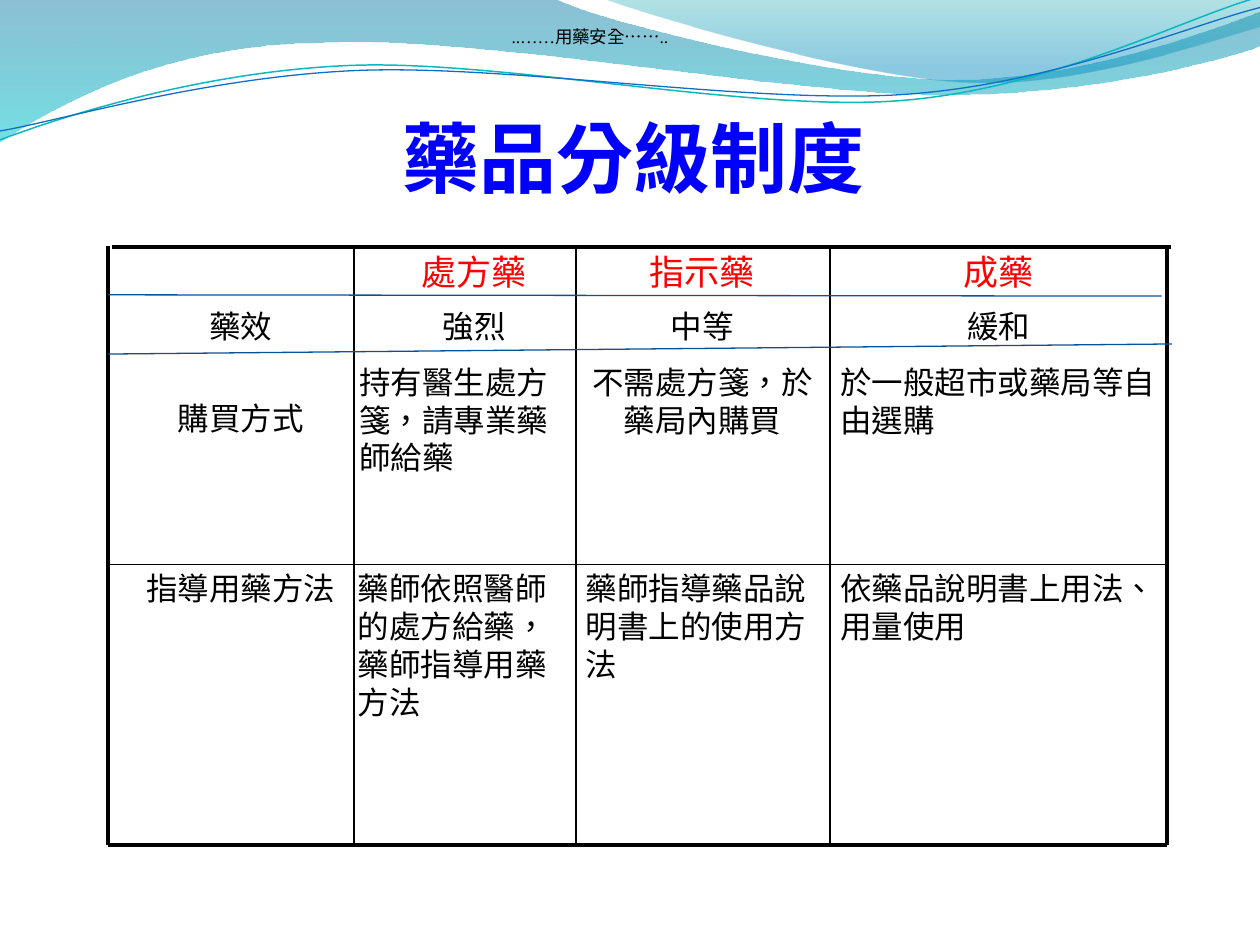
from math import cos, radians, sin

from lxml.etree import SubElement
from pptx import Presentation
from pptx.dml.color import RGBColor
from pptx.enum.shapes import MSO_CONNECTOR
from pptx.enum.text import MSO_ANCHOR, PP_ALIGN
from pptx.oxml.ns import qn
from pptx.util import Inches, Pt

COLORS = {
    "text": "000000", "title": "0000FF", "heading": "FF0000",
    "rule": "095295", "teal": "0AB8BF", "blue": "0F6FC6",
    "deep": "0074A1", "cyan": "00C6CF", "green": "00A1A9", "sky": "008BBF",
}
BODY_FONT = "Arial"
CHINESE_FONT = "Noto Sans CJK TC"
CENTER, LEFT = PP_ALIGN.CENTER, PP_ALIGN.LEFT

# Wave outlines: a start, then points (lines) or six numbers (Bezier curves)
LEFT_WAVE = [
    (0, -0.01), (4.4, -0.01),
    (4.76, 0.17, 6.64, 0.63, 7.58, 0.63), (8.53, 0.63, 9.58, 0.26, 10, 0.09),
    (10.01, 0.36),
    (9.83, 0.44, 8.7, 0.76, 7.46, 0.75), (6.22, 0.75, 3.82, 0.28, 2.57, 0.34),
    (1.29, 0.35, 0.46, 0.83, -0.01, 1.13), (0, -0.01),
]
RIGHT_WAVE = [
    (4.79, -0.01),
    (5.09, 0.11, 6.82, 0.62, 7.69, 0.65), (8.56, 0.69, 9.61, 0.32, 10, 0.21),
    (10, 0), (4.79, -0.01),
]
TEAL_CURVE = [
    (0, 1.11),
    (0.48, 0.93, 1.58, 0.57, 2.77, 0.52), (3.95, 0.47, 5.93, 0.89, 7.13, 0.8),
    (8.33, 0.71, 9.38, 0.15, 9.98, -0.02),
]
BLUE_CURVE = [
    (0, 1.04),
    (0.47, 0.96, 1.64, 0.61, 2.83, 0.56), (4.03, 0.51, 5.97, 0.83, 7.17, 0.75),
    (8.36, 0.67, 9.41, 0.21, 10, 0.06),
]
TILT = 2.7

COLUMN_EDGES = [0.86, 2.81, 4.57, 6.59, 9.26]
ROW_EDGES = [1.95, 2.4, 2.84, 4.48, 6.71]
COLUMN_LINES = [2.25, 1, 1, 1, 2.25]
ROW_LINES = {1.96: 2.25, 4.48: 1, 6.71: 2.25}
ROWS = [
    ["", "處方藥", "指示藥", "成藥"],
    ["藥效", "強烈", "中等", "緩和"],
    ["購買方式", "持有醫生處方箋，請專業藥師給藥",
     "不需處方箋，於藥局內購買", "於一般超市或藥局等自由選購"],
    ["指導用藥方法", "藥師依照醫師的處方給藥，藥師指導用藥方法",
     "藥師指導藥品說明書上的使用方法", "依藥品說明書上用法、用量使用"],
]
LEFT_ALIGNED = {(2, 1), (2, 3), (3, 1), (3, 2), (3, 3)}
SECOND_COLUMN_LEFTS = [2.96, 2.96, 2.77, 2.76]


def rgb(name):
    return RGBColor.from_string(COLORS[name])


def turn(outline, center, degrees):
    """Turn every point of an outline clockwise about a center."""
    cosine, sine = cos(radians(degrees)), sin(radians(degrees))
    turned = []
    for part in outline:
        numbers = []
        for x, y in zip(part[::2], part[1::2]):
            across, down = x - center[0], y - center[1]
            numbers += [center[0] + across * cosine - down * sine,
                        center[1] + across * sine + down * cosine]
        turned.append(tuple(numbers))
    return turned


def add_outline(page, outline, close):
    """Build a freeform on the anchor points, then bend its segments."""
    anchors = [(Inches(part[-2]), Inches(part[-1])) for part in outline]
    builder = page.shapes.build_freeform(*anchors[0])
    builder.add_line_segments(anchors[1:], close=close)
    shape = builder.convert_to_shape()
    shape.shadow.inherit = False
    segments = list(shape._element.spPr.iter(qn("a:lnTo")))
    for segment, part in zip(segments, outline[1:]):
        if len(part) == 6:
            curve = SubElement(segment.getparent(), qn("a:cubicBezTo"))
            for x, y in zip(part[::2], part[1::2]):
                SubElement(curve, qn("a:pt"), x=str(Inches(x) - shape.left),
                           y=str(Inches(y) - shape.top))
            segment.getparent().replace(segment, curve)
    return shape


def add_wave(page, outline, stops):
    """Add a filled wave; stops are (position, color, opacity percent)."""
    wave = add_outline(page, outline, True)
    wave.line.fill.background()
    wave.fill.gradient()
    wave.fill.gradient_angle = 270
    for stop, (position, color, _) in zip(wave.fill.gradient_stops, stops):
        stop.position = position
        stop.color.rgb = rgb(color)
    gradient = wave._element.spPr.find(qn("a:gradFill"))
    for node, (_, _, opacity) in zip(gradient.iter(qn("a:srgbClr")), stops):
        SubElement(node, qn("a:alpha"), val=str(opacity * 1000))


def add_curve(page, outline, center, color, width):
    curve = add_outline(page, turn(outline, center, TILT), False)
    curve.rotation = 360 - TILT
    curve.fill.background()
    curve.line.color.rgb = rgb(color)
    curve.line.width = Pt(width)


def add_waves(page):
    add_wave(page, LEFT_WAVE, [(0, "deep", 45), (1, "cyan", 55)])
    add_wave(page, RIGHT_WAVE, [(0, "green", 30), (0.8, "sky", 45)])
    add_curve(page, TEAL_CURVE, (4.99, 0.58), "teal", 0.85)
    add_curve(page, BLUE_CURVE, (5, 0.59), "blue", 0.75)


def write(frame, text, font, size, color, align=LEFT, bold=False, top=0.04):
    frame.word_wrap = True
    frame.vertical_anchor = MSO_ANCHOR.TOP
    frame.margin_left = frame.margin_right = Inches(0.08)
    frame.margin_top, frame.margin_bottom = Inches(top), Inches(0.04)
    frame.text = text
    para = frame.paragraphs[0]
    para.alignment = align
    para.line_spacing = Pt(size * 1.2)
    for span in para.runs:
        span.font.name = font
        span.font.size = Pt(size)
        span.font.bold = bold
        span.font.color.rgb = rgb(color)
        span.font._element.set("lang", "zh-TW")
        SubElement(span.font._element, qn("a:ea"), typeface=CHINESE_FONT)


def add_text(page, box, *style, **options):
    shape = page.shapes.add_textbox(*map(Inches, box))
    write(shape.text_frame, *style, **options)


def place_title(page, left, top, width, height):
    title = page.shapes.title
    title.left, title.top = Inches(left), Inches(top)
    title.width, title.height = Inches(width), Inches(height)
    write(title.text_frame, "藥品分級制度", CHINESE_FONT, 44, "title", CENTER, True)


def add_line(page, ends, color, width):
    line = page.shapes.add_connector(MSO_CONNECTOR.STRAIGHT, *map(Inches, ends))
    line.line.color.rgb = rgb(color)
    line.line.width = Pt(width)
    SubElement(line._element.spPr, qn("a:effectLst"))


def add_grid_text(page):
    for row, texts in enumerate(ROWS):
        top, bottom = ROW_EDGES[row:row + 2]
        lefts = [0.86, SECOND_COLUMN_LEFTS[row], 4.57, 6.59]
        rights = [2.96, 4.57, 6.58, 9.26]
        size, color = (20, "heading") if row == 0 else (18, "text")
        for column, text in enumerate(texts):
            if not text:
                continue
            left = lefts[column]
            align = LEFT if (row, column) in LEFT_ALIGNED else CENTER
            inset = 0.4 if (row, column) == (2, 0) else 0.04
            add_text(page, (left, top, rights[column] - left, bottom - top),
                     text, BODY_FONT, size, color, align, top=inset)


def add_grid_lines(page):
    for y, width in ROW_LINES.items():
        shift = 0.03 if y == 1.96 else 0
        left, right = COLUMN_EDGES[0] + shift, COLUMN_EDGES[-1] + shift
        add_line(page, (left, y, right, y), "text", width)
    for x, width in zip(COLUMN_EDGES, COLUMN_LINES):
        add_line(page, (x, ROW_EDGES[0], x, ROW_EDGES[-1]), "text", width)
    # Blue rules under the first two rows
    for ends in ((0.86, 2.34, 9.22, 2.35), (0.86, 2.81, 9.3, 2.73)):
        add_line(page, ends, "rule", 0.75)


def main():
    deck = Presentation()
    deck.slide_width, deck.slide_height = Inches(10), Inches(7.5)
    page = deck.slides.add_slide(deck.slide_layouts[5])
    add_waves(page)
    add_text(page, (3.98, 0.17, 3.75, 0.23), "..……用藥安全……..",
             "Times New Roman", 10, "text")
    place_title(page, 2.56, 0.84, 4.94, 0.82)
    add_grid_text(page)
    add_grid_lines(page)
    deck.save("out.pptx")


if __name__ == "__main__":
    main()
